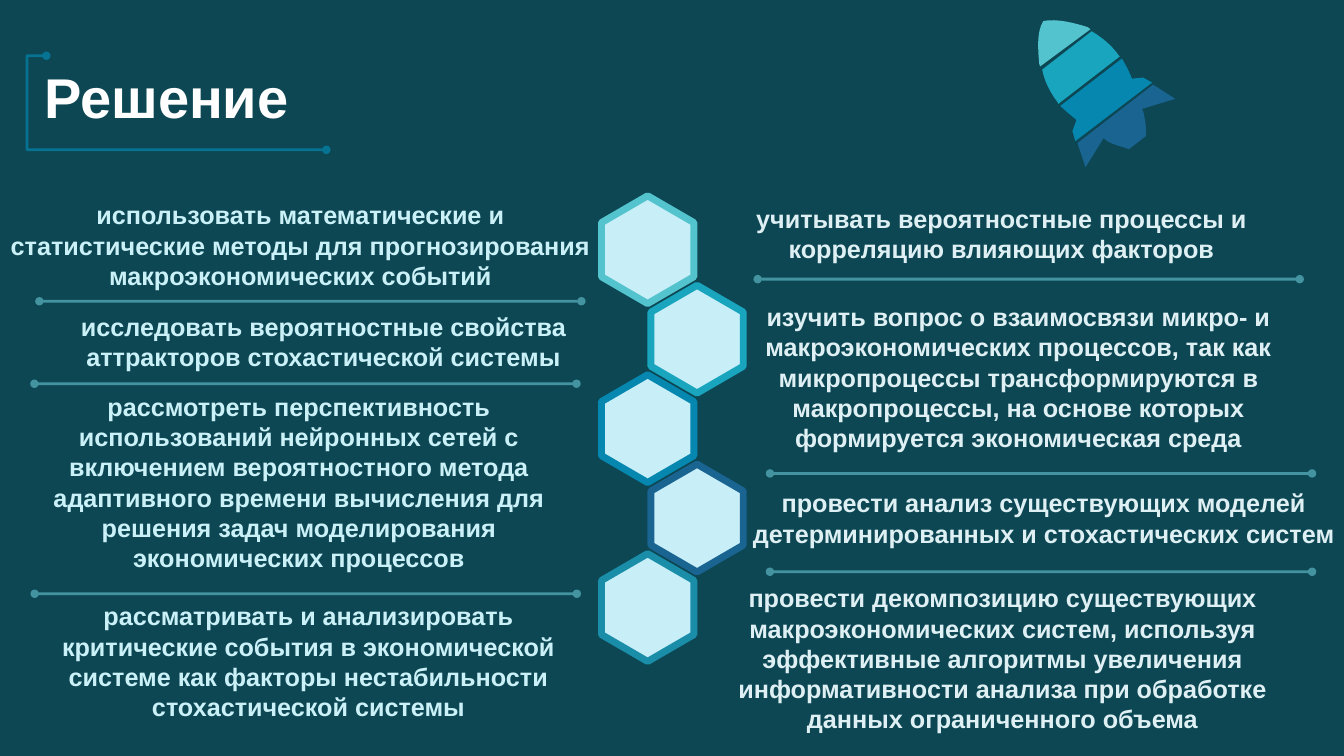
"""Builds the «Решение» slide: title, rocket, hexagon chain and two columns of tasks."""
import pptx
import pptx.util
import pptx.dml.color
import pptx.enum.shapes
import pptx.enum.text
import pptx.oxml
import pptx.oxml.ns

Pt = pptx.util.Pt
Shape = pptx.enum.shapes.MSO_SHAPE
Connector = pptx.enum.shapes.MSO_CONNECTOR
Align = pptx.enum.text.PP_ALIGN
qn = pptx.oxml.ns.qn
NAMESPACE = pptx.oxml.ns.nsdecls("a")


def paint(fill, color):
    fill.solid()
    fill.fore_color.rgb = pptx.dml.color.RGBColor.from_string(color)


def write(box, text, size, color, align):
    frame = box.text_frame
    frame.text = text
    frame.word_wrap = True
    frame.auto_size = pptx.enum.text.MSO_AUTO_SIZE.SHAPE_TO_FIT_TEXT
    frame.vertical_anchor = pptx.enum.text.MSO_ANCHOR.TOP
    para = frame.paragraphs[0]
    para.alignment = align
    font = para.runs[0].font
    font.name, font.size, font.bold = "Arial", Pt(size), True
    paint(font.fill, color)


deck = pptx.Presentation()
deck.slide_width, deck.slide_height = Pt(960), Pt(540)
page = deck.slides.add_slide(deck.slide_layouts[5])
paint(page.background.fill, "0D4754")

hexagon_width, hexagon_height = 77, 66
column_centers = [462.6, 497.9]
first_center, center_step = 178.4, 63.9
hexagon_lines = ["53C3CD", "19A5BE", "0587AF", "196491", "1A8EA9"]
for row in [3, 1, 2, 0, 4]:
    left = column_centers[row % 2] - hexagon_width / 2
    top = first_center + row * center_step - hexagon_height / 2
    hexagon = page.shapes.add_shape(
        Shape.HEXAGON, Pt(left), Pt(top), Pt(hexagon_width), Pt(hexagon_height))
    hexagon.adjustments[0] = 0.29
    hexagon.rotation = 90
    hexagon.shadow.inherit = False
    paint(hexagon.fill, "C8EEF7")
    paint(hexagon.line.fill, hexagon_lines[row])
    hexagon.line.width = Pt(5)

title = page.shapes.title
title.left, title.top, title.width, title.height = Pt(24.5), Pt(41), Pt(306), Pt(55.4)
write(title, "Решение", 40, "FFFFFF", Align.LEFT)

left_color, right_color = "CBF1F8", "DEF0F3"
tasks = [
    (0, 139, 429.1, 72.7, left_color,
     "использовать математические и статистические методы для прогнозирования "
     "макроэкономических событий"),
    (-2.9, 218.9, 468, 50.9, left_color,
     "исследовать вероятностные свойства аттракторов стохастической системы"),
    (15.8, 275.8, 395.3, 138.2, left_color,
     "рассмотреть перспективность использований нейронных сетей с включением "
     "вероятностного метода адаптивного времени вычисления для решения задач "
     "моделирования экономических процессов"),
    (25.2, 425.5, 390.2, 94.3, left_color,
     "рассматривать и анализировать критические события в экономической системе "
     "как факторы нестабильности стохастической системы"),
    (475.2, 141.8, 480.2, 50.9, right_color,
     "учитывать вероятностные процессы и корреляцию влияющих факторов"),
    (509, 211.7, 437, 116.6, right_color,
     "изучить вопрос о взаимосвязи микро- и макроэкономических процессов, так как "
     "микропроцессы трансформируются в макропроцессы, на основе которых "
     "формируется экономическая среда"),
    (505.4, 344.9, 480.2, 50.9, right_color,
     "провести анализ существующих моделей детерминированных и стохастических систем"),
    (495.4, 412.6, 441.4, 116.6, right_color,
     "провести декомпозицию существующих макроэкономических систем, используя "
     "эффективные алгоритмы увеличения информативности анализа при обработке "
     "данных ограниченного объема"),
]
for left, top, width, height, color, text in tasks:
    box = page.shapes.add_textbox(Pt(left), Pt(top), Pt(width), Pt(height))
    write(box, text, 18, color, Align.CENTER)

divider_width = 387.2
dividers = [(28.1, 215.2), (24.6, 274.1), (24.8, 424.1),
            (541.2, 199.4), (550, 338.2), (550, 408.4)]
lines = [(Connector.STRAIGHT, left, top, left + divider_width, top, "5AB4C1")
         for left, top in dividers]
lines.append((Connector.ELBOW, 33.1, 39.8, 233.1, 107, "0587AF"))
for kind, start_x, start_y, end_x, end_y, color in lines:
    line = page.shapes.add_connector(kind, Pt(start_x), Pt(start_y), Pt(end_x), Pt(end_y))
    paint(line.line.fill, color)
    line.line.width = Pt(2)
    properties = line._element.spPr
    tint = properties.find(".//" + qn("a:srgbClr"))
    tint.append(pptx.oxml.parse_xml(f'<a:alpha {NAMESPACE} val="70000"/>'))
    for end in ["headEnd", "tailEnd"]:
        properties.find(qn("a:ln")).append(
            pptx.oxml.parse_xml(f'<a:{end} {NAMESPACE} type="oval"/>'))
    properties.append(pptx.oxml.parse_xml(f"<a:effectLst {NAMESPACE}/>"))
    if kind == Connector.ELBOW:
        geometry = properties.find(qn("a:prstGeom"))
        for guides in geometry.findall(qn("a:avLst")):
            geometry.remove(guides)
        geometry.append(pptx.oxml.parse_xml(
            f'<a:avLst {NAMESPACE}><a:gd name="adj1" fmla="val -6900"/></a:avLst>'))

rocket_parts = [
    ("19A5BE", (744.5, 49.7), [
        (779.8, 22.3), (787, 26.6, 794.2, 32.4, 799.2, 39.6), (799.9, 40.3),
        (756, 74.2), (755.3, 72.7), (750.2, 66.2, 745.9, 57.6, 744.5, 49.7)]),
    ("0587AF", (757.4, 75.6), [
        (801.4, 41.8), (803.5, 45.4, 806.4, 50.4, 808.6, 56.2), (816.5, 55.4),
        (823, 59), (768.2, 100.8), (766.1, 93.6), (769, 85.7),
        (764.6, 82.1, 760.3, 78.5, 757.4, 75.6)]),
    ("196491", (769.7, 102.2), [
        (823.7, 60.5), (839.5, 70.6), (815.8, 77.8),
        (817.2, 80.6, 817.2, 82.1, 817.9, 85.7),
        (818.6, 89.3, 818.6, 93.6, 818.6, 97.2), (806.4, 106.6),
        (802.8, 105.1, 799.2, 104.4, 795.6, 103),
        (792, 101.5, 791.3, 101.5, 788.4, 98.6), (775.4, 119.5)]),
    ("53C3CD", (745.2, 15.1), [
        (754.6, 13, 768.2, 16.6, 776.9, 19.4), (779, 20.9), (743, 47.5),
        (742.3, 45.4), (741.6, 36.7, 740.2, 23, 745.2, 15.1)]),
]
curve_steps = 8
for color, start, segments in rocket_parts:
    points = [start]
    for segment in segments:
        if len(segment) == 2:
            points.append(segment)
            continue
        x0, y0 = points[-1]
        x1, y1, x2, y2, x3, y3 = segment
        for step in range(1, curve_steps + 1):
            t = step / curve_steps
            a, b, c, d = (1 - t) ** 3, 3 * t * (1 - t) ** 2, 3 * t ** 2 * (1 - t), t ** 3
            points.append((a * x0 + b * x1 + c * x2 + d * x3,
                           a * y0 + b * y1 + c * y2 + d * y3))
    outline = page.shapes.build_freeform(Pt(start[0]), Pt(start[1]))
    outline.add_line_segments([(Pt(x), Pt(y)) for x, y in points[1:]], close=True)
    part = outline.convert_to_shape()
    part.shadow.inherit = False
    paint(part.fill, color)
    part.line.fill.background()

deck.save("out.pptx")
